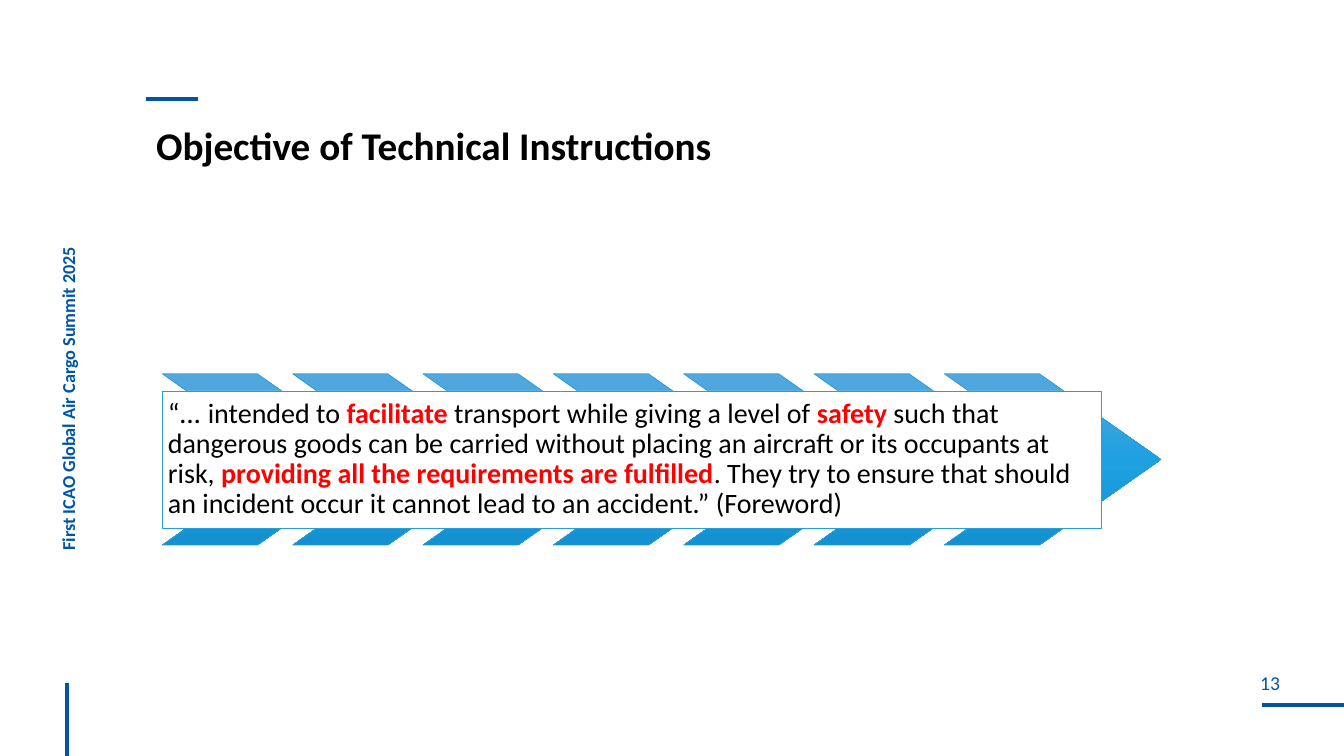
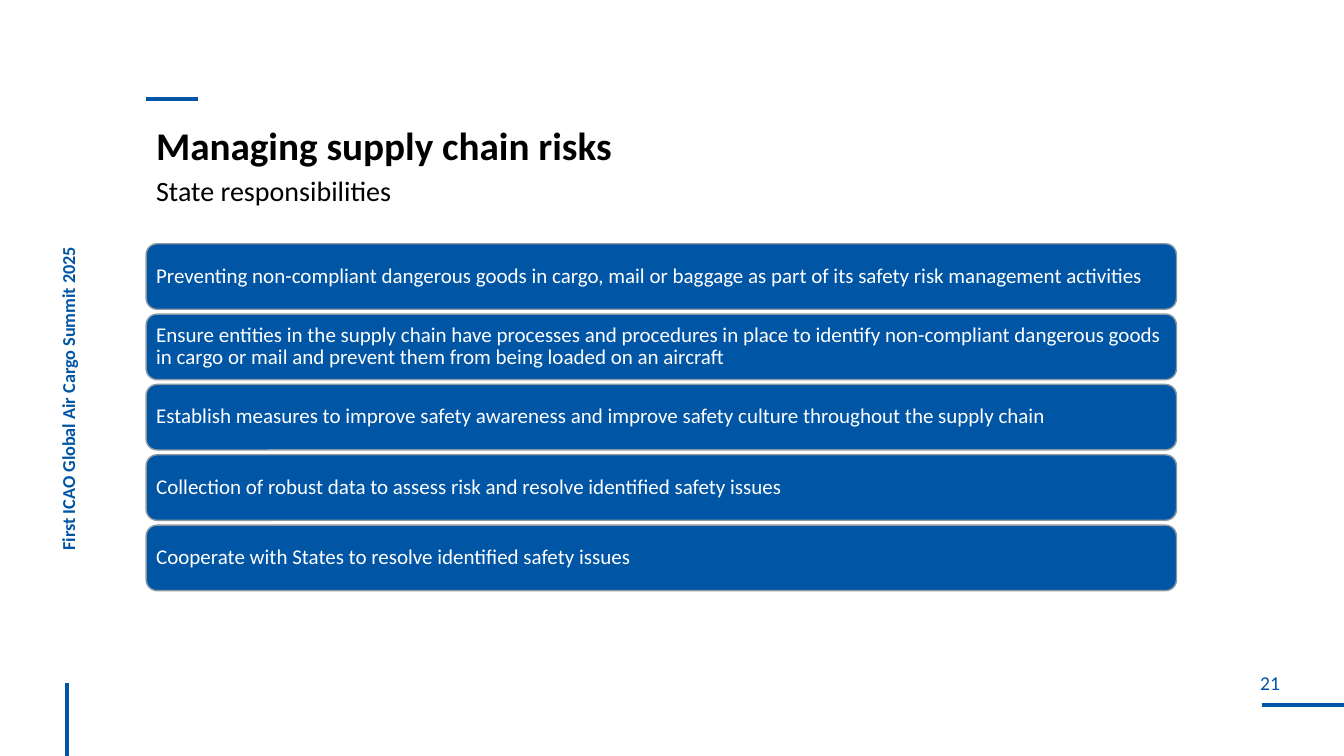
from copy import deepcopy

from lxml import etree
from pptx import Presentation, util as u
from pptx.dml.color import RGBColor
from pptx.enum import shapes, text
from pptx.oxml import ns

Pt = u.Pt
COLORS = {
    "blue": "0055A5",
    "black": "000000",
    "white": "FFFFFF",
    "red": "FF0000",
    "card_line": "8C99A1",
    "arrow_line": "289DD8",
    "arrow_top": "53A8DE",
    "arrow_middle": "1FA0E1",
    "arrow_bottom": "1391D0",
}
ARROW_GRADIENT = [(0, "arrow_top"), (0.5, "arrow_middle"), (1, "arrow_bottom")]
FONT = "Calibri"
BLANK_LAYOUT = 6
WIDTH, HEIGHT = 960, 540
LEFT, CONTENT_WIDTH = 104.4, 736
SIDE_TEXT = "First ICAO Global Air Cargo Summit 2025"


def rgb(name):
    return RGBColor.from_string(COLORS[name])


class Deck:
    """Holds the shared style and the slide being built."""

    def __init__(self):
        self.presentation = Presentation()
        self.presentation.slide_width = Pt(WIDTH)
        self.presentation.slide_height = Pt(HEIGHT)
        self.slide = None

    def new_slide(self, title, number):
        layout = self.presentation.slide_layouts[BLANK_LAYOUT]
        self.slide = self.presentation.slides.add_slide(layout)
        self.rule(901.4, 503.3, WIDTH, 503.3)
        self.rule(47.7, 487.6, 47.7, HEIGHT)
        self.rule(LEFT, 70.6, 141.1, 70.6)
        page = self.text_box(864, 479.6, 86.4, 23.8, str(number), 14, "blue",
                             spacing=1, insets=(0, 0, 0, 0))
        page.text_frame.paragraphs[0].alignment = text.PP_ALIGN.CENTER
        side = self.text_box(-134.6, 203.8, 370, 23, SIDE_TEXT, 13, "blue", bold=True)
        side.rotation = 270
        self.text_box(LEFT, 87.1, CONTENT_WIDTH, 33.1, title, 28, "black", bold=True)

    def rule(self, x1, y1, x2, y2):
        line = self.slide.shapes.add_connector(
            shapes.MSO_CONNECTOR.STRAIGHT, Pt(x1), Pt(y1), Pt(x2), Pt(y2))
        line.line.color.rgb = rgb("blue")
        line.line.width = Pt(3)
        etree.SubElement(line._element.spPr, ns.qn("a:effectLst"))

    def set_text(self, shape, segments, size, spacing, insets, anchor):
        """Fill a shape with one paragraph of (text, color, bold, font) segments."""
        frame = shape.text_frame
        frame.word_wrap = True
        frame.vertical_anchor = anchor
        (frame.margin_left, frame.margin_top,
         frame.margin_right, frame.margin_bottom) = map(Pt, insets)
        paragraph = frame.paragraphs[0]
        paragraph.alignment = text.PP_ALIGN.LEFT
        paragraph.line_spacing = spacing
        for words, color, bold, font in segments:
            run = paragraph.add_run()
            run.text = words
            run.font.size = Pt(size)
            run.font.name = font
            run.font.bold = bold
            run.font.color.rgb = rgb(color)

    def text_box(self, left, top, width, height, words, size, color, bold=False,
                 spacing=0.9, insets=(7.2, 3.6, 7.2, 3.6)):
        box = self.slide.shapes.add_textbox(Pt(left), Pt(top), Pt(width), Pt(height))
        self.set_text(box, [(words, color, bold, FONT)], size, spacing, insets,
                      text.MSO_ANCHOR.TOP)
        return box

    def outlined_shape(self, kind, left, top, width, height, line, weight):
        shape = self.slide.shapes.add_shape(
            kind, Pt(left), Pt(top), Pt(width), Pt(height))
        shape.shadow.inherit = False
        shape.line.color.rgb = rgb(line)
        shape.line.width = Pt(weight)
        return shape

    def panel(self, kind, left, top, width, height, fill, line, weight,
              segments, size, insets):
        shape = self.outlined_shape(kind, left, top, width, height, line, weight)
        shape.fill.solid()
        shape.fill.fore_color.rgb = rgb(fill)
        self.set_text(shape, segments, size, 0.9, insets, text.MSO_ANCHOR.MIDDLE)

    def chevron(self, left, top, width, height):
        shape = self.outlined_shape(shapes.MSO_SHAPE.CHEVRON, left, top, width, height,
                                    "arrow_line", 0.5)
        shape.adjustments[0] = 0.71
        shape.fill.gradient()
        shape.fill.gradient_angle = 270
        stop_list = shape._element.spPr.find(".//" + ns.qn("a:gsLst"))
        stop_list.append(deepcopy(stop_list[0]))
        for stop, (position, color) in zip(shape.fill.gradient_stops, ARROW_GRADIENT):
            stop.position = position
            stop.color.rgb = rgb(color)


def build_objective(deck):
    deck.new_slide("Objective of Technical Instructions", 13)
    left, pitch = 115.9, 93.1
    for index in range(7):
        deck.chevron(left + index * pitch, 267, 154.8, 122.4)
    quote = [
        ("“", "black", False, FONT),
        ("… ", "black", False, "Lato"),
        ("intended to ", "black", False, FONT),
        ("facilitate", "red", True, FONT),
        (" transport while giving a level of ", "black", False, FONT),
        ("safety", "red", True, FONT),
        (" such that dangerous goods can be carried without placing an aircraft "
         "or its occupants at risk, ", "black", False, FONT),
        ("providing all the requirements are fulfilled", "red", True, FONT),
        (". They try to ensure that should an incident occur it cannot lead to "
         "an accident.” (Foreword)", "black", False, FONT),
    ]
    deck.panel(shapes.MSO_SHAPE.RECTANGLE, left, 279.2, 671, 98, "white",
               "arrow_line", 0.5, quote, 20, (4, 4, 4, 4))


def build_responsibilities(deck):
    deck.new_slide("Managing supply chain risks", 21)
    deck.text_box(LEFT, 125.3, CONTENT_WIDTH, 28, "State responsibilities", 20,
                  "black", spacing=0.8)
    responsibilities = [
        "Preventing non-compliant dangerous goods in cargo, mail or baggage as part "
        "of its safety risk management activities",
        "Ensure entities in the supply chain have processes and procedures in place "
        "to identify non-compliant dangerous goods in cargo or mail and prevent them "
        "from being loaded on an aircraft",
        "Establish measures to improve safety awareness and improve safety culture "
        "throughout the supply chain",
        "Collection of robust data to assess risk and resolve identified safety issues",
        "Cooperate with States to resolve identified safety issues",
    ]
    top, pitch = 174.1, 50.25
    for index, words in enumerate(responsibilities):
        deck.panel(shapes.MSO_SHAPE.ROUNDED_RECTANGLE, LEFT, top + index * pitch,
                   CONTENT_WIDTH, 46.8, "blue", "card_line", 1,
                   [(words, "white", False, FONT)], 15, (4.9, 4, 4, 4))


def main():
    deck = Deck()
    build_objective(deck)
    build_responsibilities(deck)
    deck.presentation.save("out.pptx")


if __name__ == "__main__":
    main()
